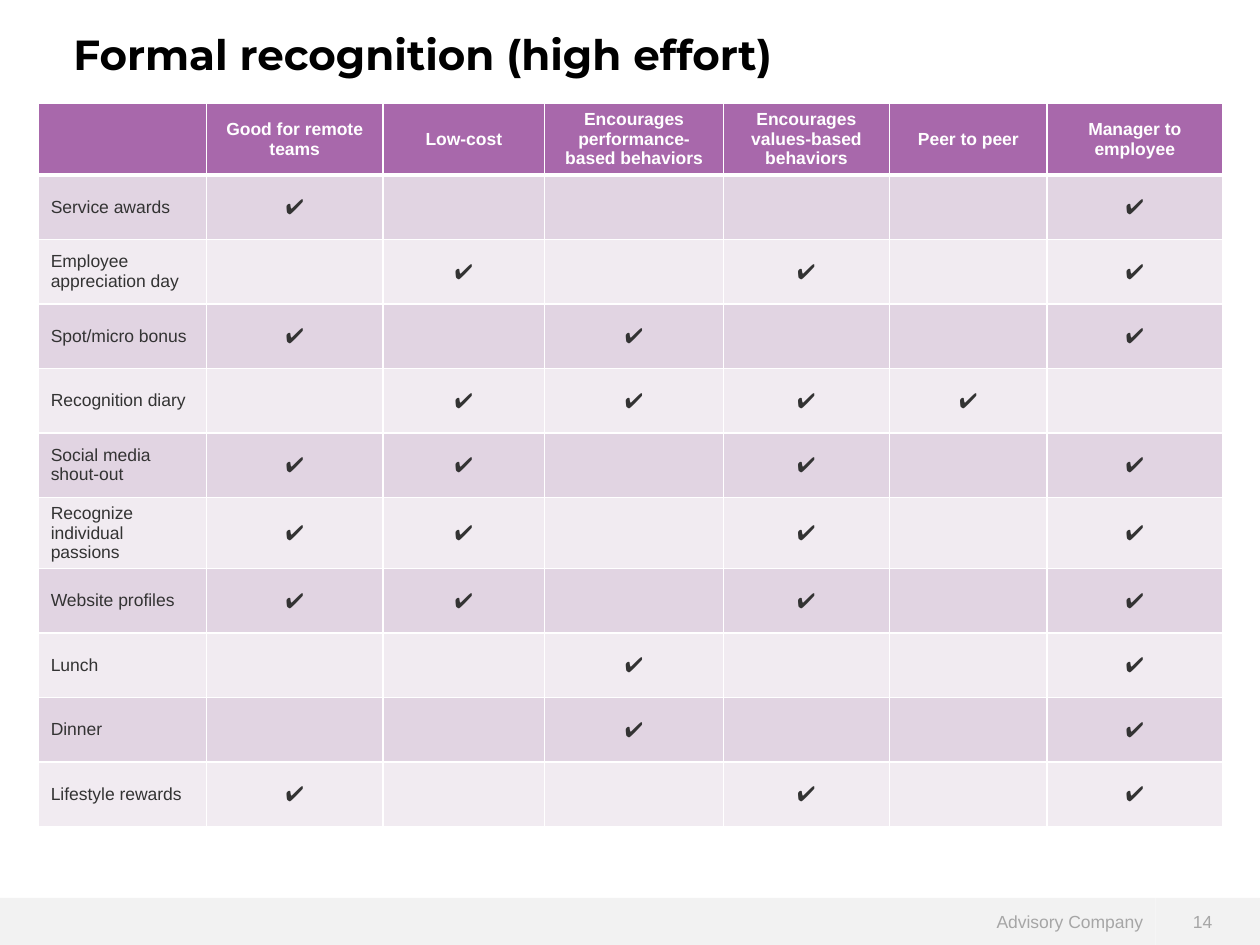
"""Build a slide that compares formal recognition ideas in a check-mark table."""
from dataclasses import dataclass

from lxml.etree import SubElement
from pptx import Presentation
from pptx.dml.color import RGBColor
from pptx.enum.shapes import MSO_SHAPE
from pptx.enum.text import MSO_ANCHOR, PP_ALIGN
from pptx.oxml.ns import qn
from pptx.slide import Slide
from pptx.table import _Cell
from pptx.text.text import TextFrame
from pptx.util import Cm, Length, Pt


@dataclass(frozen=True)
class Theme:
    heading_font: str = "Montserrat"
    body_font: str = "Arial"
    title_size: int = 24
    body_size: int = 10
    check_size: int = 12
    title: str = "000000"
    body: str = "333333"
    header_fill: str = "A868AB"
    row_fills: tuple[str, str] = ("E1D4E2", "F1EBF1")
    white: str = "FFFFFF"
    footer_fill: str = "F2F2F2"
    footer: str = "A6A6A6"
    rule: float = 1
    header_rule: float = 3


@dataclass(frozen=True)
class Criterion:
    label: str
    width: float


@dataclass(frozen=True)
class Idea:
    label: str
    checks: str


@dataclass(frozen=True)
class FooterPart:
    text: str
    left: float
    width: float
    align: PP_ALIGN
    margin_left: float


THEME = Theme()
CHECK = "✔"

CRITERIA = (
    Criterion("", 3.39),
    Criterion("Good for remote teams", 3.56),
    Criterion("Low-cost", 3.26),
    Criterion("Encourages performance-based behaviors", 3.6),
    Criterion("Encourages values-based behaviors", 3.35),
    Criterion("Peer to peer", 3.18),
    Criterion("Manager to employee", 3.53),
)

IDEAS = (
    Idea("Service awards", "x....x"),
    Idea("Employee appreciation day", ".x.x.x"),
    Idea("Spot/micro bonus", "x.x..x"),
    Idea("Recognition diary", ".xxxx."),
    Idea("Social media shout-out", "xx.x.x"),
    Idea("Recognize individual passions", "xx.x.x"),
    Idea("Website profiles", "xx.x.x"),
    Idea("Lunch", "..x..x"),
    Idea("Dinner", "..x..x"),
    Idea("Lifestyle rewards", "x..x.x"),
)

FOOTER = (
    FooterPart("Advisory Company", 0, 23.29, PP_ALIGN.RIGHT, 0.25),
    FooterPart("14", 23.29, 2.11, PP_ALIGN.LEFT, 0.76),
)


def write(frame: TextFrame, text: str, size: int, color: str, font: str = THEME.body_font,
          bold: bool = False, align: PP_ALIGN = PP_ALIGN.LEFT) -> None:
    """Put one formatted line of text into a frame."""
    frame.text = text
    line = frame.paragraphs[0]
    line.alignment = align
    for run in line.runs:
        run.font.name = font
        run.font.size = Pt(size)
        run.font.bold = bold
        run.font.color.rgb = RGBColor.from_string(color)


def add_rule(cell: _Cell, side: str, width: Length) -> None:
    """Draw a white rule on one side of a cell."""
    rule = SubElement(cell._tc.get_or_add_tcPr(), qn(f"a:ln{side}"), w=str(width))
    SubElement(SubElement(rule, qn("a:solidFill")), qn("a:srgbClr"), val=THEME.white)


def style_cell(cell: _Cell, fill: str, top: float, bottom: float) -> None:
    """Rule, fill and centre a cell vertically."""
    for side, width in (("L", THEME.rule), ("R", THEME.rule), ("T", top), ("B", bottom)):
        add_rule(cell, side, Pt(width))
    cell.fill.solid()
    cell.fill.fore_color.rgb = RGBColor.from_string(fill)
    cell.vertical_anchor = MSO_ANCHOR.MIDDLE


def add_title(slide: Slide, text: str) -> None:
    """Add the slide heading."""
    heading = slide.shapes.add_textbox(Cm(1.23), Cm(0.46), Cm(21.92), Cm(1.55))
    heading.text_frame.word_wrap = True
    write(heading.text_frame, text, THEME.title_size, THEME.title, THEME.heading_font, True)


def add_comparison(slide: Slide) -> None:
    """Add the table of ideas against criteria."""
    total_width = sum(criterion.width for criterion in CRITERIA)
    row_height = Cm(1.3)
    comparison = slide.shapes.add_table(
        len(IDEAS) + 1, len(CRITERIA), Cm(0.77), Cm(2.09),
        Cm(total_width), row_height * (len(IDEAS) + 1)).table
    comparison.rows[0].height = Cm(1.27)

    for column, criterion in enumerate(CRITERIA):
        comparison.columns[column].width = Cm(criterion.width)
        header = comparison.cell(0, column)
        style_cell(header, THEME.header_fill, THEME.rule, THEME.header_rule)
        write(header.text_frame, criterion.label, THEME.body_size, THEME.white,
              bold=True, align=PP_ALIGN.CENTER)

    for row, idea in enumerate(IDEAS, start=1):
        comparison.rows[row].height = row_height
        top = THEME.header_rule if row == 1 else THEME.rule
        for cell in comparison.rows[row].cells:
            style_cell(cell, THEME.row_fills[(row - 1) % 2], top, THEME.rule)
        write(comparison.cell(row, 0).text_frame, idea.label, THEME.body_size, THEME.body)
        for column, mark in enumerate(idea.checks, start=1):
            if mark == "x":
                write(comparison.cell(row, column).text_frame, CHECK, THEME.check_size,
                      THEME.body, align=PP_ALIGN.CENTER)


def add_footer_part(slide: Slide, part: FooterPart) -> None:
    """Add one section of the footer band."""
    band = slide.shapes.add_shape(
        MSO_SHAPE.RECTANGLE, Cm(part.left), Cm(18.1), Cm(part.width), Cm(0.95))
    band.shadow.inherit = False
    band.fill.solid()
    band.fill.fore_color.rgb = RGBColor.from_string(THEME.footer_fill)
    band.line.fill.background()
    band.text_frame.margin_left = Cm(part.margin_left)
    band.text_frame.vertical_anchor = MSO_ANCHOR.MIDDLE
    write(band.text_frame, part.text, THEME.body_size, THEME.footer, align=part.align)


def main() -> None:
    """Build and save the presentation."""
    presentation = Presentation()
    presentation.slide_width, presentation.slide_height = Cm(25.4), Cm(19.05)
    slide = presentation.slides.add_slide(presentation.slide_layouts[6])
    for part in FOOTER:
        add_footer_part(slide, part)
    add_comparison(slide)
    add_title(slide, "Formal recognition (high effort)")
    presentation.save("out.pptx")


if __name__ == "__main__":
    main()
